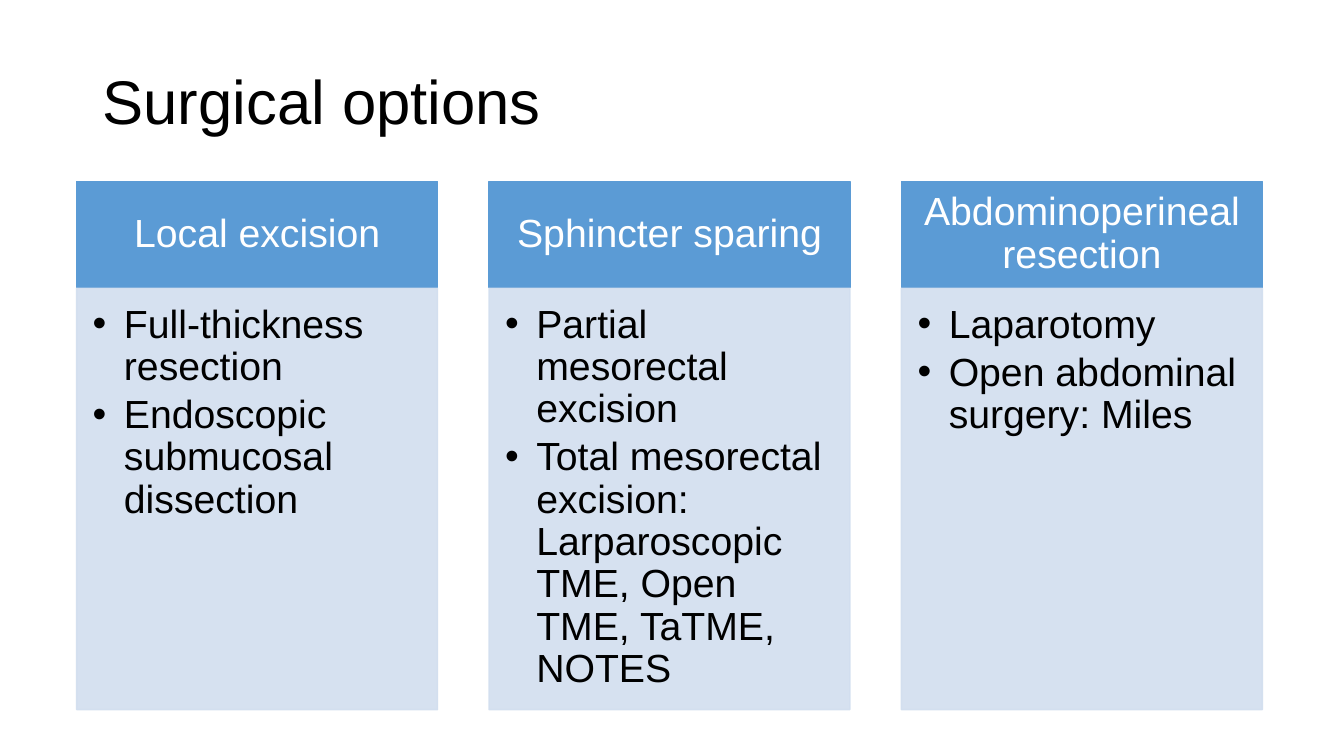
from pptx import Presentation
from pptx.dml.color import RGBColor
from pptx.enum.shapes import MSO_SHAPE
from pptx.enum.text import MSO_ANCHOR, PP_ALIGN
from pptx.oxml.ns import qn
from pptx.util import Inches, Pt
from lxml import etree

RECTANGLE = MSO_SHAPE.RECTANGLE
TOP, MIDDLE = MSO_ANCHOR.TOP, MSO_ANCHOR.MIDDLE
LEFT, CENTER = PP_ALIGN.LEFT, PP_ALIGN.CENTER

BLACK = RGBColor(0x00, 0x00, 0x00)
WHITE = RGBColor(0xFF, 0xFF, 0xFF)
BLUE = RGBColor(0x5B, 0x9B, 0xD5)
PALE_BLUE = RGBColor(0xD2, 0xDE, 0xEF)

COLUMN_LEFT, COLUMN_STEP, COLUMN_WIDTH = 0.76, 4.09, 3.58
HEADER_TOP, HEADER_HEIGHT = 1.8, 1.05
BODY_TOP, BODY_HEIGHT = 2.86, 4.18
BULLET_INDENT = 0.31

OPTIONS = [
    ("Local excision",
     ["Full-thickness resection", "Endoscopic submucosal dissection"]),
    ("Sphincter sparing",
     ["Partial mesorectal excision",
      "Total mesorectal excision: Larparoscopic TME, Open TME, TaTME, NOTES"]),
    ("Abdominoperineal resection",
     ["Laparotomy", "Open abdominal surgery: Miles"]),
]


def set_all(target, values):
    for name, value in values.items():
        setattr(target, name, value)


def set_opacity(fill, percent):
    """Make a solid fill see-through; python-pptx has no method for this."""
    color = fill._xPr.find(qn("a:solidFill"))[0]
    etree.SubElement(color, qn("a:alpha"), val=str(percent * 1000))


class SlideBuilder:
    font = "Arial"
    line_spacing = 0.9

    def __init__(self, page):
        self.page = page

    def add_text(self, box, texts, size, color, insets, anchor=MIDDLE,
                 align=LEFT, bulleted=False):
        frame = box.text_frame
        margins = ("margin_left", "margin_top", "margin_right", "margin_bottom")
        set_all(frame, dict(zip(margins, map(Inches, insets))))
        set_all(frame, {"word_wrap": True, "vertical_anchor": anchor})
        for index, text in enumerate(texts):
            para = frame.add_paragraph() if index else frame.paragraphs[0]
            set_all(para, {"alignment": align, "line_spacing": self.line_spacing,
                           "space_after": Pt(4 if bulleted else 0)})
            if bulleted:
                self.add_bullet(para)
            span = para.add_run()
            span.text = text
            set_all(span.font, {"name": self.font, "size": Pt(size)})
            span.font.color.rgb = color

    def add_bullet(self, para):
        properties = para._p.get_or_add_pPr()
        properties.set("marL", str(Inches(BULLET_INDENT)))
        properties.set("indent", str(-Inches(BULLET_INDENT)))
        etree.SubElement(properties, qn("a:buFont"), typeface=self.font)
        etree.SubElement(properties, qn("a:buChar"), char="•")

    def title(self, text, *bounds):
        box = self.page.shapes.add_textbox(*map(Inches, bounds))
        self.add_text(box, [text], 44, BLACK, (0.1, 0.05, 0.1, 0.05))

    def panel(self, bounds, color, opacity=100):
        box = self.page.shapes.add_shape(RECTANGLE, *map(Inches, bounds))
        box.shadow.inherit = False
        box.line.width = Pt(1)
        for fill in (box.fill, box.line.fill):
            fill.solid()
            fill.fore_color.rgb = color
            if opacity < 100:
                set_opacity(fill, opacity)
        return box

    def column(self, left, heading, items):
        header = self.panel((left, HEADER_TOP, COLUMN_WIDTH, HEADER_HEIGHT), BLUE)
        self.add_text(header, [heading], 28, WHITE, (0.2, 0.12, 0.2, 0.12),
                      align=CENTER)
        body = self.panel((left, BODY_TOP, COLUMN_WIDTH, BODY_HEIGHT),
                          PALE_BLUE, opacity=90)
        self.add_text(body, items, 28, BLACK, (0.16, 0.16, 0.22, 0.24),
                      anchor=TOP, bulleted=True)


def main():
    deck = Presentation()
    set_all(deck, {"slide_width": Inches(13.33), "slide_height": Inches(7.5)})
    builder = SlideBuilder(deck.slides.add_slide(deck.slide_layouts[6]))
    builder.title("Surgical options", 0.92, 0.4, 11.5, 1.28)
    for index, (heading, items) in enumerate(OPTIONS):
        builder.column(COLUMN_LEFT + index * COLUMN_STEP, heading, items)
    deck.save("out.pptx")


if __name__ == "__main__":
    main()
